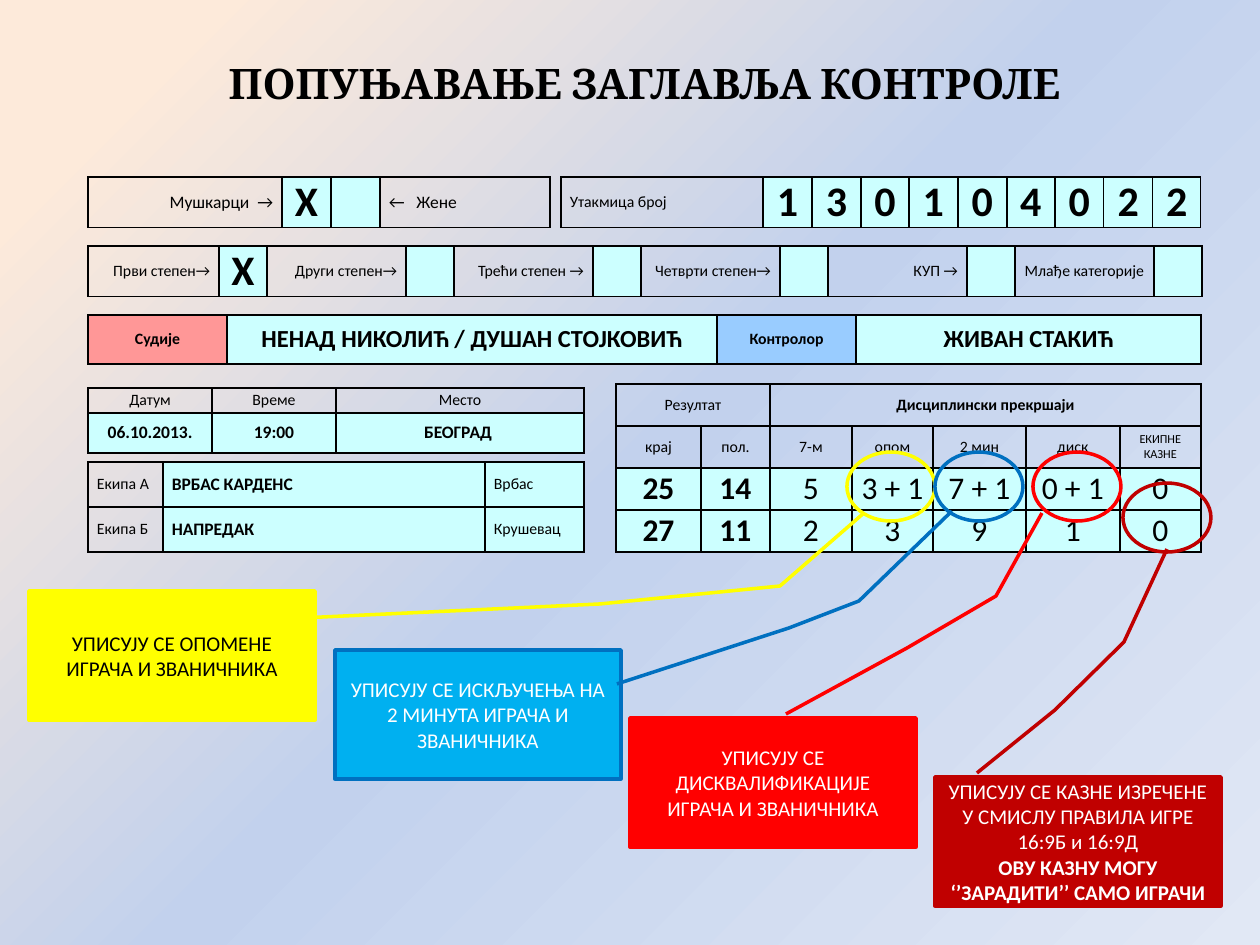
import copy
from dataclasses import dataclass

import pptx
import pptx.dml.color
import pptx.enum.shapes
import pptx.enum.text
import pptx.oxml
import pptx.oxml.ns
import pptx.util
from lxml import etree

ALIGN = pptx.enum.text.PP_ALIGN
LEFT, CENTER, RIGHT = ALIGN.LEFT, ALIGN.CENTER, ALIGN.RIGHT
SHAPES = pptx.enum.shapes.MSO_SHAPE


@dataclass(frozen=True)
class Theme:
    heading: str = "Cambria"
    body: str = "Calibri"
    black: str = "000000"
    white: str = "FFFFFF"
    entry: str = "CCFFFF"
    referee: str = "FF9797"
    controller: str = "99CCFF"
    yellow: str = "FFFF00"
    sky: str = "00B0F0"
    blue: str = "0070C0"
    red: str = "FF0000"
    dark_red: str = "C00000"
    backdrop: tuple = ((0.10, "FDEADA"), (0.50, "C2D1ED"), (1.00, "E1E8F5"))
    mark: int = 24
    score: int = 18
    name: int = 14
    callout: int = 12
    value: int = 10
    label: int = 9
    small: int = 7
    border: int = 1
    outline: int = 2


T = Theme()

# cell kind: (size, bold, alignment, fill)
CELLS = {
    "gender_right": (T.value, False, RIGHT, None),
    "gender_left": (T.value, False, LEFT, None),
    "label": (T.label, False, CENTER, None),
    "label_left": (T.label, False, LEFT, None),
    "label_right": (T.label, False, RIGHT, None),
    "label_bold": (T.label, True, CENTER, None),
    "label_small": (T.small, False, CENTER, None),
    "referee": (T.label, True, CENTER, T.referee),
    "controller": (T.label, True, CENTER, T.controller),
    "mark": (T.mark, True, CENTER, T.entry),
    "name": (T.name, True, CENTER, T.entry),
    "value": (T.value, True, CENTER, T.entry),
    "team": (T.value, True, LEFT, T.entry),
    "town": (T.label, False, LEFT, T.entry),
    "score": (T.score, True, CENTER, T.entry),
    "count": (T.score, False, CENTER, T.entry),
}


def row_of(kind, *texts):
    return [(text, kind) for text in texts]


TITLE = "ПОПУЊАВАЊЕ ЗАГЛАВЉА КОНТРОЛЕ"
TITLE_BOX = (88, 39, 1113, 88)

DEGREES = ["Први степен→", "Други степен→", "Трећи степен →", "Четврти степен→", "КУП →"]
degree_row = []
for degree in DEGREES:
    degree_row += [(degree, "label_right"), ("" if degree_row else "Х", "mark")]
degree_row += [("Млађе категорије", "label"), ("", "mark")]

# (left, top), column widths, row heights, rows of (text, kind), merges of (row, first, last)
TABLES = [
    ((88, 177), [194, 49, 49, 170], [50],
     [[("Мушкарци  →", "gender_right"), ("Х", "mark"), ("", "mark"),
       ("←   Жене", "gender_left")]], []),
    ((561, 177), [202] + [49, 49, 48] * 3, [50],
     [[("Утакмица број", "label_left")] + row_of("mark", *"130104022")], []),
    ((88, 246), [131, 48] + [139, 48] * 5, [50], [degree_row], []),
    ((88, 315), [139, 490, 139, 345], [49],
     [[("Судије", "referee"), ("НЕНАД НИКОЛИЋ / ДУШАН СТОЈКОВИЋ", "name"),
       ("Контролор", "controller"), ("ЖИВАН СТАКИЋ", "name")]], []),
    ((88, 388), [124, 124, 248], [25, 40],
     [row_of("label", "Датум", "Време", "Место"),
      row_of("value", "06.10.2013.", "19:00", "БЕОГРАД ")], []),
    ((88, 462), [75, 322, 99], [45] * 2,
     [[("Екипа А", "label_left"), ("ВРБАС КАРДЕНС", "team"), ("Врбас", "town")],
      [("Екипа Б", "label_left"), ("НАПРЕДАК", "team"), ("Крушевац", "town")]], []),
    ((616, 384), [85, 69, 82, 81, 93, 94, 81], [42] * 4,
     [[("Резултат", "label"), ("", "label"), ("Дисциплински прекршаји", "label_bold")]
      + [("", "label")] * 4,
      row_of("label", "крај", "пол.", "7-м", "опом", "2 мин", "диск")
      + [("ЕКИПНЕ КАЗНЕ", "label_small")],
      row_of("score", "25", "14") + row_of("count", "5", "3 + 1", "7 + 1", "0 + 1", "0"),
      row_of("score", "27", "11") + row_of("count", "2", "3", "9", "1", "0")],
     [(0, 0, 1), (0, 2, 6)]),
]

CALLOUT_SIZE = (286, 129)
RING_SIZE = (88, 69)

# box corner, leader points, ring corner, fill, outline, text colour, (text, bold) paragraphs
CALLOUTS = [
    ((935, 777), [(977, 773), (1055, 710), (1124, 642), (1167, 549)], (1123, 483),
     T.dark_red, T.dark_red, T.white,
     [("УПИСУЈУ СЕ КАЗНЕ ИЗРЕЧЕНЕ У СМИСЛУ ПРАВИЛА ИГРЕ 16:9Б и 16:9Д", False),
      ("ОВУ КАЗНУ МОГУ ‘’ЗАРАДИТИ’’ САМО ИГРАЧИ", True)]),
    ((630, 718), [(786, 714), (907, 648), (996, 596), (1042, 513)], (1033, 452),
     T.red, T.red, T.white,
     [("УПИСУЈУ СЕ ДИСКВАЛИФИКАЦИЈЕ ИГРАЧА И ЗВАНИЧНИКА", False)]),
    ((335, 650), [(617, 684), (789, 628), (859, 601), (952, 511)], (935, 452),
     T.sky, T.blue, T.white,
     [("УПИСУЈУ СЕ ИСКЉУЧЕЊА НА 2 МИНУТА ИГРАЧА И ЗВАНИЧНИКА", False)]),
    ((29, 591), [(302, 618), (600, 604), (780, 586), (864, 513)], (847, 452),
     T.yellow, T.yellow, T.black,
     [("УПИСУЈУ СЕ ОПОМЕНЕ ИГРАЧА И ЗВАНИЧНИКА", False)]),
]


def px(length):
    return pptx.util.Emu(round(length * 914400 / 126))


def rgb(color):
    return pptx.dml.color.RGBColor.from_string(color)


def write(paragraph, text, size, bold, align, color=T.black, font=T.body):
    paragraph.alignment = align
    run = paragraph.add_run()
    run.text = text
    run.font.name, run.font.size, run.font.bold = font, pptx.util.Pt(size), bold
    run.font.color.rgb = rgb(color)


def paint_backdrop(slide):
    fill = slide.background.fill
    fill.gradient()
    fill.gradient_angle = 315
    stop_list = slide.element.find(".//" + pptx.oxml.ns.qn("a:gsLst"))
    stop_list.append(copy.deepcopy(stop_list[0]))
    for stop, (position, color) in zip(fill.gradient_stops, T.backdrop):
        stop.position = position
        stop.color.rgb = rgb(color)


def border(cell):
    properties = cell._tc.get_or_add_tcPr()
    for side in ("lnL", "lnR", "lnT", "lnB"):
        line = etree.SubElement(properties, pptx.oxml.ns.qn("a:" + side),
                                w=str(pptx.util.Pt(T.border)))
        solid = etree.SubElement(line, pptx.oxml.ns.qn("a:solidFill"))
        etree.SubElement(solid, pptx.oxml.ns.qn("a:srgbClr"), val=T.black)


def fill_cell(cell, text, kind):
    size, bold, align, fill = CELLS[kind]
    cell.margin_left = cell.margin_right = px(9)
    cell.margin_top = cell.margin_bottom = 0
    cell.vertical_anchor = pptx.enum.text.MSO_ANCHOR.MIDDLE
    border(cell)
    if fill:
        cell.fill.solid()
        cell.fill.fore_color.rgb = rgb(fill)
    else:
        cell.fill.background()
    if text:
        write(cell.text_frame.paragraphs[0], text, size, bold, align)


def add_form(slide, corner, widths, heights, rows, merges):
    box = (*corner, sum(widths), sum(heights))
    form = slide.shapes.add_table(len(heights), len(widths), *map(px, box)).table
    form.first_row = form.horz_banding = False
    for column, width in zip(form.columns, widths):
        column.width = px(width)
    for r, (height, row) in enumerate(zip(heights, rows)):
        form.rows[r].height = px(height)
        for c, (text, kind) in enumerate(row):
            fill_cell(form.cell(r, c), text, kind)
    for r, first, last in merges:
        form.cell(r, first).merge(form.cell(r, last))


def add_outlined(slide, preset, corner, size, outline):
    shape = slide.shapes.add_shape(preset, *map(px, (*corner, *size)))
    shape.shadow.inherit = False
    shape.line.color.rgb = rgb(outline)
    shape.line.width = pptx.util.Pt(T.outline)
    return shape


def add_callout(slide, corner, leader, fill, outline, color, paragraphs):
    callout = add_outlined(slide, SHAPES.LINE_CALLOUT_3, corner, CALLOUT_SIZE, outline)
    callout.fill.solid()
    callout.fill.fore_color.rgb = rgb(fill)
    for i, (x, y) in enumerate(leader):
        callout.adjustments[2 * i] = (y - corner[1]) / CALLOUT_SIZE[1]
        callout.adjustments[2 * i + 1] = (x - corner[0]) / CALLOUT_SIZE[0]
    frame = callout.text_frame
    frame.word_wrap = True
    frame.vertical_anchor = pptx.enum.text.MSO_ANCHOR.MIDDLE
    for i, (text, bold) in enumerate(paragraphs):
        paragraph = frame.add_paragraph() if i else frame.paragraphs[0]
        write(paragraph, text, T.callout, bold, CENTER, color)


def main():
    deck = pptx.Presentation()
    deck.slide_width, deck.slide_height = px(1260), px(945)
    slide = deck.slides.add_slide(deck.slide_layouts[6])
    paint_backdrop(slide)
    title = slide.shapes.add_textbox(*map(px, TITLE_BOX)).text_frame
    title.word_wrap = True
    title.vertical_anchor = pptx.enum.text.MSO_ANCHOR.MIDDLE
    write(title.paragraphs[0], TITLE, T.mark, True, CENTER, font=T.heading)
    for form in TABLES:
        add_form(slide, *form)
    for corner, leader, _, *look in CALLOUTS:
        add_callout(slide, corner, leader, *look)
    for _, _, ring, _, outline, *_ in reversed(CALLOUTS):
        add_outlined(slide, SHAPES.OVAL, ring, RING_SIZE, outline).fill.background()
    deck.save("out.pptx")


if __name__ == "__main__":
    main()
